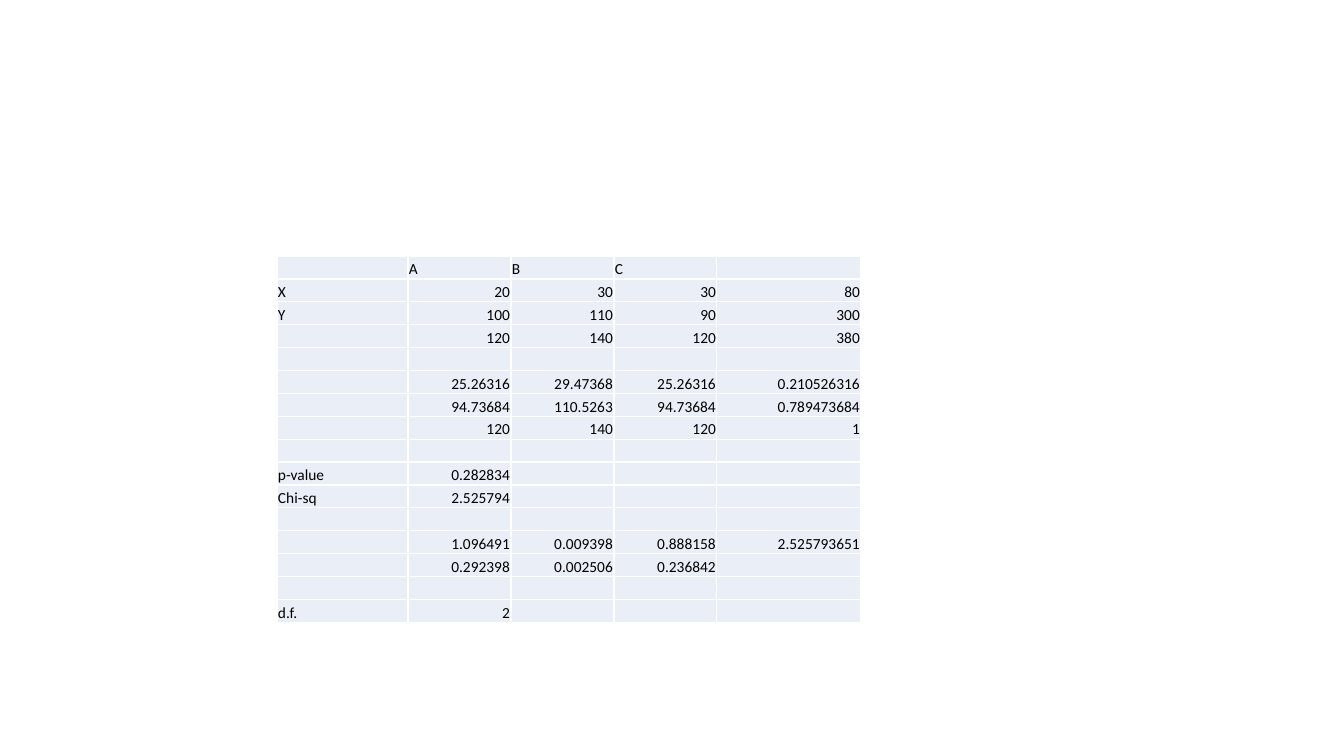
from lxml.etree import SubElement
from pptx import Presentation
from pptx.dml.color import RGBColor as RGB
from pptx.enum.text import MSO_ANCHOR as ANCHOR, PP_ALIGN as ALIGN
from pptx.oxml.ns import qn
from pptx.util import Pt

THEME = {
    "font": "Calibri",
    "size": Pt(11),
    "ink": RGB.from_string("000000"),
    "cell": RGB.from_string("EAEFF7"),
    "grid": "FFFFFF",
    "grid_width": Pt(1),
}
EMU_PER_INCH, PX_PER_INCH = 914400, 100.8


def px(length):
    return round(length * EMU_PER_INCH / PX_PER_INCH)


def draw_borders(cell):
    properties = cell._tc.get_or_add_tcPr()
    for position, side in enumerate(("a:lnL", "a:lnR", "a:lnT", "a:lnB")):
        border = properties.makeelement(qn(side), {"w": str(THEME["grid_width"])})
        properties.insert(position, border)
        SubElement(SubElement(border, qn("a:solidFill")), qn("a:srgbClr"), val=THEME["grid"])


chi_square_rows = [
    ["", "A", "B", "C", ""],
    ["X", "20", "30", "30", "80"],
    ["Y", "100", "110", "90", "300"],
    ["", "120", "140", "120", "380"],
    [""] * 5,
    ["", "25.26316", "29.47368", "25.26316", "0.210526316"],
    ["", "94.73684", "110.5263", "94.73684", "0.789473684"],
    ["", "120", "140", "120", "1"],
    [""] * 5,
    ["p-value", "0.282834", "", "", ""],
    ["Chi-sq", "2.525794", "", "", ""],
    [""] * 5,
    ["", "1.096491", "0.009398", "0.888158", "2.525793651"],
    ["", "0.292398", "0.002506", "0.236842", ""],
    [""] * 5,
    ["d.f.", "2", "", "", ""],
]
column_widths = [131, 103, 103, 103, 144]

deck = Presentation()
deck.slide_width, deck.slide_height = px(1344), px(756)
slide = deck.slides.add_slide(deck.slide_layouts[6])

chi_square = slide.shapes.add_table(
    len(chi_square_rows), len(column_widths),
    px(277), px(256), px(sum(column_widths)), px(367),
).table
chi_square.first_row = False
chi_square.horz_banding = False
for column, width in zip(chi_square.columns, column_widths):
    column.width = px(width)

for row, values in enumerate(chi_square_rows):
    for column, value in enumerate(values):
        cell = chi_square.cell(row, column)
        cell.text = value
        cell.vertical_anchor = ANCHOR.BOTTOM
        cell.margin_left = cell.margin_right = cell.margin_top = px(1)
        cell.margin_bottom = 0
        cell.fill.solid()
        cell.fill.fore_color.rgb = THEME["cell"]
        draw_borders(cell)

        entry = cell.text_frame.paragraphs[0]
        entry.alignment = ALIGN.RIGHT if value[:1].isdigit() else ALIGN.LEFT
        entry.font.name = THEME["font"]
        entry.font.size = THEME["size"]
        entry.font.color.rgb = THEME["ink"]
        if not value:
            SubElement(entry._p, qn("a:endParaRPr"), sz=str(int(THEME["size"].pt * 100)))

deck.save("out.pptx")
